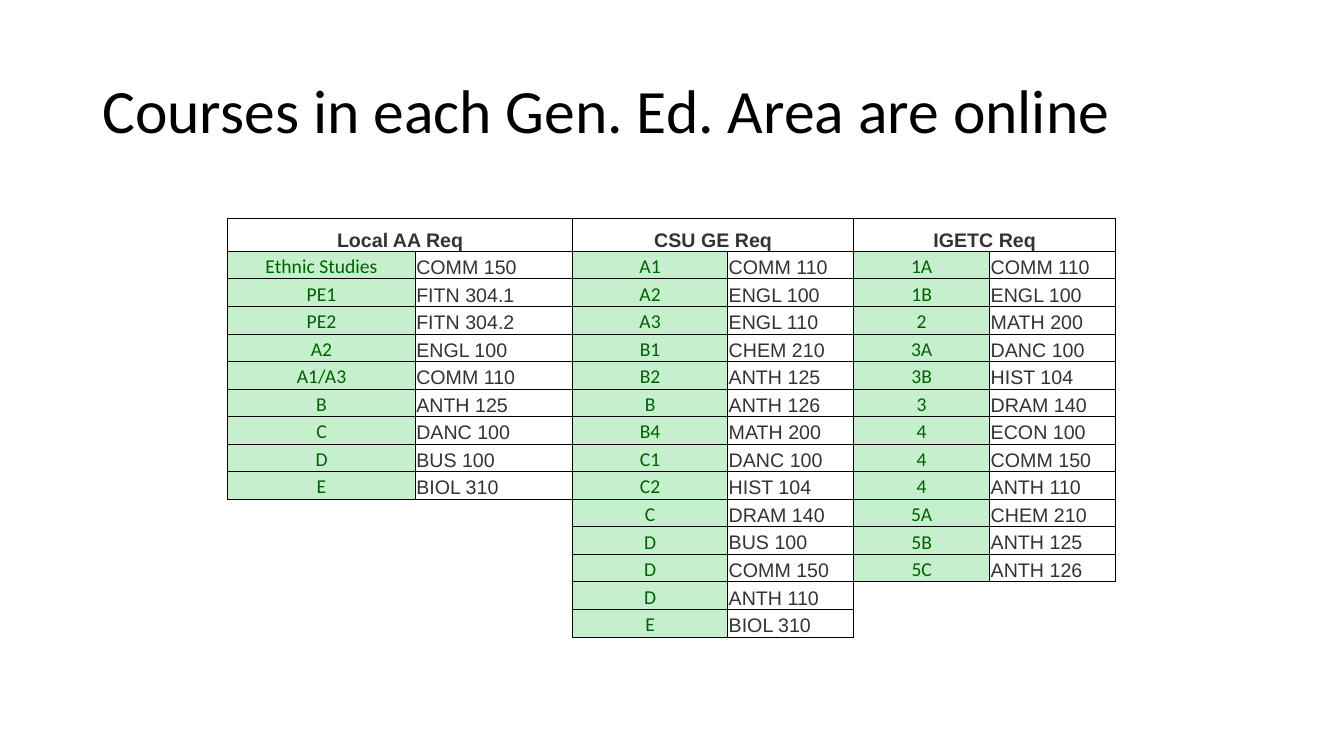
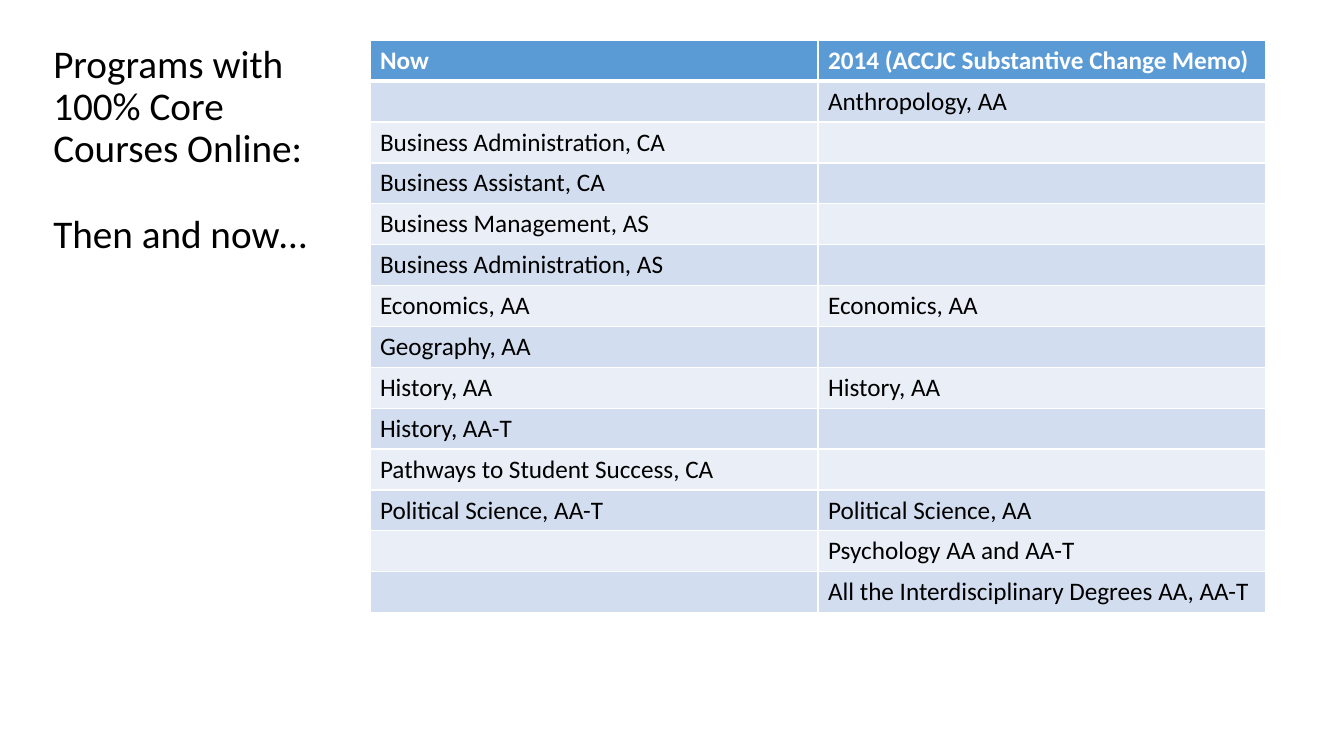
from dataclasses import dataclass
from typing import Optional

from lxml import etree
from pptx import Presentation
from pptx import util as u
from pptx.dml.color import RGBColor
from pptx.enum import text
from pptx.oxml.ns import qn

# Grid: 160 columns by 90 rows
SLIDE_W, SLIDE_H = u.Inches(13.333), u.Inches(7.5)
COLS, ROWS = 160, 90


def gx(n: float) -> int:
    return round(SLIDE_W * n / COLS)


def gy(n: float) -> int:
    return round(SLIDE_H * n / ROWS)


@dataclass(frozen=True)
class Theme:
    ink: str = "000000"
    paper: str = "FFFFFF"
    course_ink: str = "333333"
    area_ink: str = "006100"
    area_fill: str = "C6EFCE"
    header_fill: str = "5B9BD5"
    bands: tuple[str, str] = ("D2DEEF", "EAEFF7")
    body_font: str = "Calibri"
    course_font: str = "Arial"
    title_size: int = 44
    side_title_size: int = 28
    program_size: int = 18
    course_size: int = 14
    line_spacing: float = 0.9


T = Theme()


@dataclass(frozen=True)
class Box:
    left: float
    top: float
    width: float
    height: float

    def emu(self) -> tuple[int, int, int, int]:
        return gx(self.left), gy(self.top), gx(self.width), gy(self.height)


@dataclass(frozen=True)
class Look:
    size: int
    font: str = T.body_font
    color: str = T.ink
    fill: str = T.paper
    bold: bool = False
    align: text.PP_ALIGN = text.PP_ALIGN.LEFT


@dataclass(frozen=True)
class Edge:
    color: str
    points: float


@dataclass(frozen=True)
class AreaGroup:
    header: str
    widths: tuple[float, float]
    courses: list[tuple[str, str]]


# Cell formats
AREA = Look(T.course_size, color=T.area_ink, fill=T.area_fill, align=text.PP_ALIGN.CENTER)
COURSE = Look(T.course_size, T.course_font, T.course_ink)
GROUP_HEADER = Look(T.course_size, T.course_font, T.course_ink, bold=True,
                    align=text.PP_ALIGN.CENTER)
PROGRAM_HEADER = Look(T.program_size, color=T.paper, fill=T.header_fill, bold=True)
TIGHT_CELL = {
    "margin_left": u.Inches(0.01), "margin_right": u.Inches(0.01),
    "margin_top": u.Inches(0.01), "margin_bottom": 0,
    "vertical_anchor": text.MSO_ANCHOR.BOTTOM,
}
TITLE_FRAME = {
    "word_wrap": True, "auto_size": text.MSO_AUTO_SIZE.NONE,
    "vertical_anchor": text.MSO_ANCHOR.MIDDLE,
}
PLAIN_TABLE = {"first_row": False, "horz_banding": False}

# Content
GROUPS = [
    AreaGroup("Local AA Req", (22.32, 18.72), [
        ("Ethnic Studies", "COMM 150"), ("PE1", "FITN 304.1"), ("PE2", "FITN 304.2"),
        ("A2", "ENGL 100"), ("A1/A3", "COMM 110"), ("B", "ANTH 125"),
        ("C", "DANC 100"), ("D", "BUS 100"), ("E", "BIOL 310"),
    ]),
    AreaGroup("CSU GE Req", (18.48, 15), [
        ("A1", "COMM 110"), ("A2", "ENGL 100"), ("A3", "ENGL 110"), ("B1", "CHEM 210"),
        ("B2", "ANTH 125"), ("B", "ANTH 126"), ("B4", "MATH 200"), ("C1", "DANC 100"),
        ("C2", "HIST 104"), ("C", "DRAM 140"), ("D", "BUS 100"), ("D", "COMM 150"),
        ("D", "ANTH 110"), ("E", "BIOL 310"),
    ]),
    AreaGroup("IGETC Req", (16.2, 15), [
        ("1A", "COMM 110"), ("1B", "ENGL 100"), ("2", "MATH 200"), ("3A", "DANC 100"),
        ("3B", "HIST 104"), ("3", "DRAM 140"), ("4", "ECON 100"), ("4", "COMM 150"),
        ("4", "ANTH 110"), ("5A", "CHEM 210"), ("5B", "ANTH 125"), ("5C", "ANTH 126"),
    ]),
]
PROGRAMS = [
    ("Now", "2014 (ACCJC Substantive Change Memo)"),
    ("", "Anthropology, AA"),
    ("Business Administration, CA", ""),
    ("Business Assistant, CA", ""),
    ("Business Management, AS", ""),
    ("Business Administration, AS", ""),
    ("Economics, AA", "Economics, AA"),
    ("Geography, AA", ""),
    ("History, AA", "History, AA"),
    ("History, AA-T", ""),
    ("Pathways to Student Success, CA", ""),
    ("Political Science, AA-T", "Political Science, AA"),
    ("", "Psychology AA and AA-T"),
    ("", "All the Interdisciplinary Degrees AA, AA-T"),
]


# Shared drawing functions
def set_format(obj, values: dict) -> None:
    for name, value in values.items():
        setattr(obj, name, value)


def write(p, words: str, look: Look) -> None:
    p.alignment = look.align
    if not words:
        etree.SubElement(p._p, qn("a:endParaRPr"), sz=str(look.size * 100))
        return
    r = p.add_run()
    r.text = words
    set_format(r.font, {"name": look.font, "size": u.Pt(look.size), "bold": look.bold})
    r.font.color.rgb = RGBColor.from_string(look.color)


def add_title(s, box: Box, lines: list[str], size: int, gap: float = 0) -> None:
    tf = s.shapes.add_textbox(*box.emu()).text_frame
    set_format(tf, TITLE_FRAME)
    for i, line in enumerate(lines):
        p = tf.add_paragraph() if i else tf.paragraphs[0]
        p.line_spacing = T.line_spacing
        p.space_before = u.Pt(gap if i else 0)
        write(p, line, Look(size))


def add_grid(s, box: Box, widths: list[float], heights: list[float]):
    tbl = s.shapes.add_table(len(heights), len(widths), *box.emu()).table
    set_format(tbl, PLAIN_TABLE)
    for col, width in zip(tbl.columns, widths):
        col.width = gx(width)
    for row, height in zip(tbl.rows, heights):
        row.height = gy(height)
    return tbl


def set_borders(cell, edges: dict[str, Optional[Edge]]) -> None:
    """Draw the L, R, T and B edges; the lines go ahead of the cell's fill."""
    tc_pr = cell._tc.get_or_add_tcPr()
    for i, side in enumerate("LRTB"):
        edge = edges[side]
        ln = etree.Element(qn(f"a:ln{side}"), w=str(u.Pt(edge.points) if edge else 0))
        if edge:
            fill = etree.SubElement(ln, qn("a:solidFill"))
            etree.SubElement(fill, qn("a:srgbClr"), val=edge.color)
        else:
            etree.SubElement(ln, qn("a:noFill"))
        tc_pr.insert(i, ln)


def fill_cell(cell, words: str, look: Look, edges: dict[str, Optional[Edge]]) -> None:
    cell.fill.solid()
    cell.fill.fore_color.rgb = RGBColor.from_string(look.fill)
    set_borders(cell, edges)
    write(cell.text_frame.paragraphs[0], words, look)


# Slide 1: courses by general education area
def courses_slide(prs) -> None:
    s = prs.slides.add_slide(prs.slide_layouts[6])
    add_title(s, Box(11, 4.8, 138, 17.4), ["Courses in each Gen. Ed. Area are online"],
              T.title_size)

    box, header_h = Box(27.12, 25.95, 105.72, 49.92), 3.96
    widths = [w for g in GROUPS for w in g.widths]
    depth = max(len(g.courses) for g in GROUPS)
    row_h = (box.height - header_h) / depth
    tbl = add_grid(s, box, widths, [header_h] + [row_h] * depth)
    rule = Edge(T.ink, 0.5)

    def in_use(row: int, col: int) -> bool:
        return 0 <= col < len(widths) and row <= len(GROUPS[col // 2].courses)

    for row in range(depth + 1):
        for col in range(len(widths)):
            group, part = GROUPS[col // 2], col % 2
            used = in_use(row, col)
            near = {"L": (row, col - 1), "R": (row, col + 1),
                    "T": (row - 1, col), "B": (row + 1, col)}
            edges = {side: rule if used or in_use(*at) else None
                     for side, at in near.items()}
            if row == 0:
                words, look = "" if part else group.header, GROUP_HEADER
            elif used:
                words, look = group.courses[row - 1][part], (AREA, COURSE)[part]
            else:
                words, look = "", COURSE
            cell = tbl.cell(row, col)
            set_format(cell, TIGHT_CELL)
            fill_cell(cell, words, look, edges)
    for col in range(0, len(widths), 2):
        tbl.cell(0, col).merge(tbl.cell(0, col + 1))


# Slide 2: programs then and now
def programs_slide(prs) -> None:
    s = prs.slides.add_slide(prs.slide_layouts[6])
    add_title(s, Box(5.16, 9.24, 35.28, 17.4),
              ["Programs with 100% Core Courses Online:", "Then and now…"],
              T.side_title_size, gap=31)

    box = Box(44.04, 4.8, 106.68, 68.16)
    tbl = add_grid(s, box, [box.width / 2] * 2, [box.height / len(PROGRAMS)] * len(PROGRAMS))
    thin, thick = Edge(T.paper, 1), Edge(T.paper, 3)
    for row, names in enumerate(PROGRAMS):
        look = Look(T.program_size, fill=T.bands[(row - 1) % 2]) if row else PROGRAM_HEADER
        edges = dict.fromkeys("LRT", thin) | {"B": thin if row else thick}
        for col, name in enumerate(names):
            fill_cell(tbl.cell(row, col), name, look, edges)


def main() -> None:
    prs = Presentation()
    set_format(prs, {"slide_width": SLIDE_W, "slide_height": SLIDE_H})
    courses_slide(prs)
    programs_slide(prs)
    prs.save("out.pptx")


if __name__ == "__main__":
    main()
